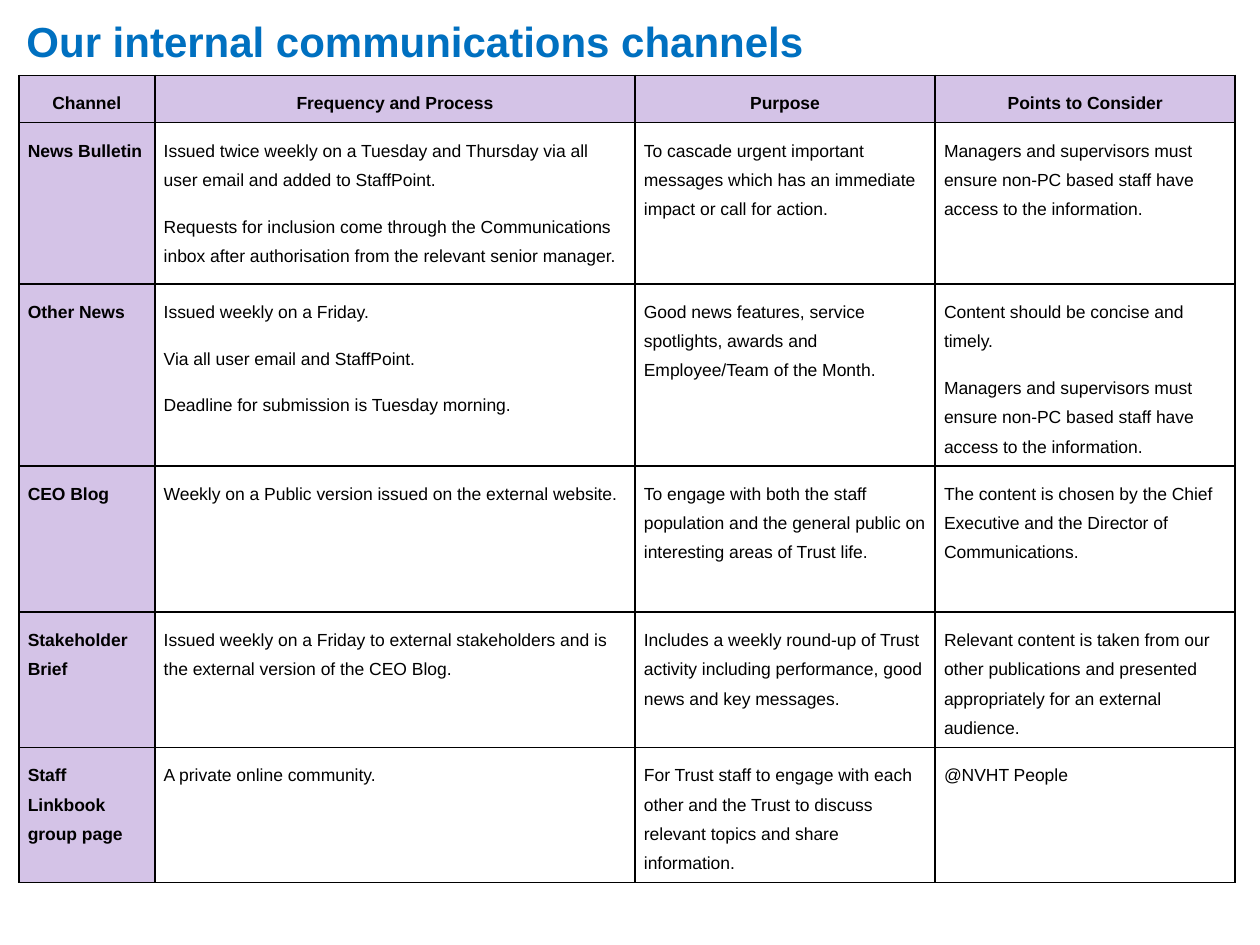
from dataclasses import dataclass

from pptx import Presentation
from pptx.dml.color import RGBColor
from pptx.enum.text import MSO_ANCHOR, PP_ALIGN
from pptx.oxml import parse_xml
from pptx.oxml.ns import nsdecls
from pptx.util import Cm, Pt


@dataclass(frozen=True)
class Theme:
    font: str = "Arial"
    title_color: RGBColor = RGBColor(0x00, 0x70, 0xC0)
    text_color: RGBColor = RGBColor(0x00, 0x00, 0x00)
    label_fill: RGBColor = RGBColor(0xD4, 0xC3, 0xE7)
    body_fill: RGBColor = RGBColor(0xFF, 0xFF, 0xFF)
    title_size: Pt = Pt(24)
    table_size: Pt = Pt(10)
    border: Pt = Pt(1)
    cell_margin: Cm = Cm(0.18)


THEME = Theme()

COLUMN_WIDTHS = [2.74, 9.68, 6.05, 6.05]
ROW_HEIGHTS = [0.89, 3.25, 3.53, 2.95, 2.64, 2.41]

STAFF_ACCESS = (
    "Managers and supervisors must ensure non-PC based staff have access to the information."
)

CHANNELS = [
    ["Channel", "Frequency and Process", "Purpose", "Points to Consider"],
    [
        "News Bulletin",
        "Issued twice weekly on a Tuesday and Thursday via all user email and added to StaffPoint.\n"
        "Requests for inclusion come through the Communications inbox after authorisation "
        "from the relevant senior manager.",
        "To cascade urgent important messages which has an immediate impact or call for action.",
        STAFF_ACCESS,
    ],
    [
        "Other News",
        "Issued weekly on a Friday.\n"
        "Via all user email and StaffPoint.\n"
        "Deadline for submission is Tuesday morning.",
        "Good news features, service spotlights, awards and Employee/Team of the Month.",
        "Content should be concise and timely.\n" + STAFF_ACCESS,
    ],
    [
        "CEO Blog",
        "Weekly on a Public version issued on the external website.",
        "To engage with both the staff population and the general public on "
        "interesting areas of Trust life.",
        "The content is chosen by the Chief Executive and the Director of Communications.",
    ],
    [
        "Stakeholder Brief",
        "Issued weekly on a Friday to external stakeholders and is the external version "
        "of the CEO Blog.",
        "Includes a weekly round-up of Trust activity including performance, good news "
        "and key messages.",
        "Relevant content is taken from our other publications and presented "
        "appropriately for an external audience.",
    ],
    [
        "Staff Linkbook group page",
        "A private online community.",
        "For Trust staff to engage with each other and the Trust to discuss relevant "
        "topics and share information.",
        "@NVHT People",
    ],
]


def set_font(paragraph, size, color, bold):
    font = paragraph.font
    font.name = THEME.font
    font.size = size
    font.bold = bold
    font.color.rgb = color


def add_title(slide, text):
    title = slide.shapes.title
    title.left, title.top, title.width, title.height = Cm(0.28), Cm(0.13), Cm(19.96), Cm(1.55)
    frame = title.text_frame
    frame.text = text
    frame.vertical_anchor = MSO_ANCHOR.MIDDLE
    frame.margin_bottom = Cm(0.28)
    heading = frame.paragraphs[0]
    heading.alignment = PP_ALIGN.LEFT
    set_font(heading, THEME.title_size, THEME.title_color, True)


def add_borders(cell):
    properties = cell._tc.get_or_add_tcPr()
    for position, side in enumerate(("lnL", "lnR", "lnT", "lnB")):
        line = parse_xml(
            f'<a:{side} {nsdecls("a")} w="{THEME.border}"><a:solidFill>'
            f'<a:srgbClr val="{THEME.text_color}"/></a:solidFill></a:{side}>'
        )
        properties.insert(position, line)


def fill_cell(cell, text, is_header, is_label):
    cell.text = text
    cell.margin_left = cell.margin_right = THEME.cell_margin
    cell.margin_top = cell.margin_bottom = THEME.cell_margin
    cell.vertical_anchor = MSO_ANCHOR.MIDDLE if is_header else MSO_ANCHOR.TOP
    cell.fill.solid()
    cell.fill.fore_color.rgb = THEME.label_fill if is_label else THEME.body_fill
    for paragraph in cell.text_frame.paragraphs:
        paragraph.alignment = PP_ALIGN.CENTER if is_header else PP_ALIGN.LEFT
        paragraph.line_spacing = 1.5
        paragraph.space_after = Pt(10)
        set_font(paragraph, THEME.table_size, THEME.text_color, is_label)
    add_borders(cell)


def add_channel_table(slide):
    channels = slide.shapes.add_table(
        len(ROW_HEIGHTS), len(COLUMN_WIDTHS), Cm(0.38), Cm(1.52),
        Cm(sum(COLUMN_WIDTHS)), Cm(sum(ROW_HEIGHTS)),
    ).table
    for column, width in zip(channels.columns, COLUMN_WIDTHS):
        column.width = Cm(width)
    for row, height in zip(channels.rows, ROW_HEIGHTS):
        row.height = Cm(height)
    for r, entries in enumerate(CHANNELS):
        for c, text in enumerate(entries):
            fill_cell(channels.cell(r, c), text, r == 0, r == 0 or c == 0)


def main():
    presentation = Presentation()
    presentation.slide_width = Cm(25.4)
    presentation.slide_height = Cm(19.05)
    slide = presentation.slides.add_slide(presentation.slide_layouts[5])
    add_title(slide, "Our internal communications channels")
    add_channel_table(slide)
    presentation.save("out.pptx")


if __name__ == "__main__":
    main()
